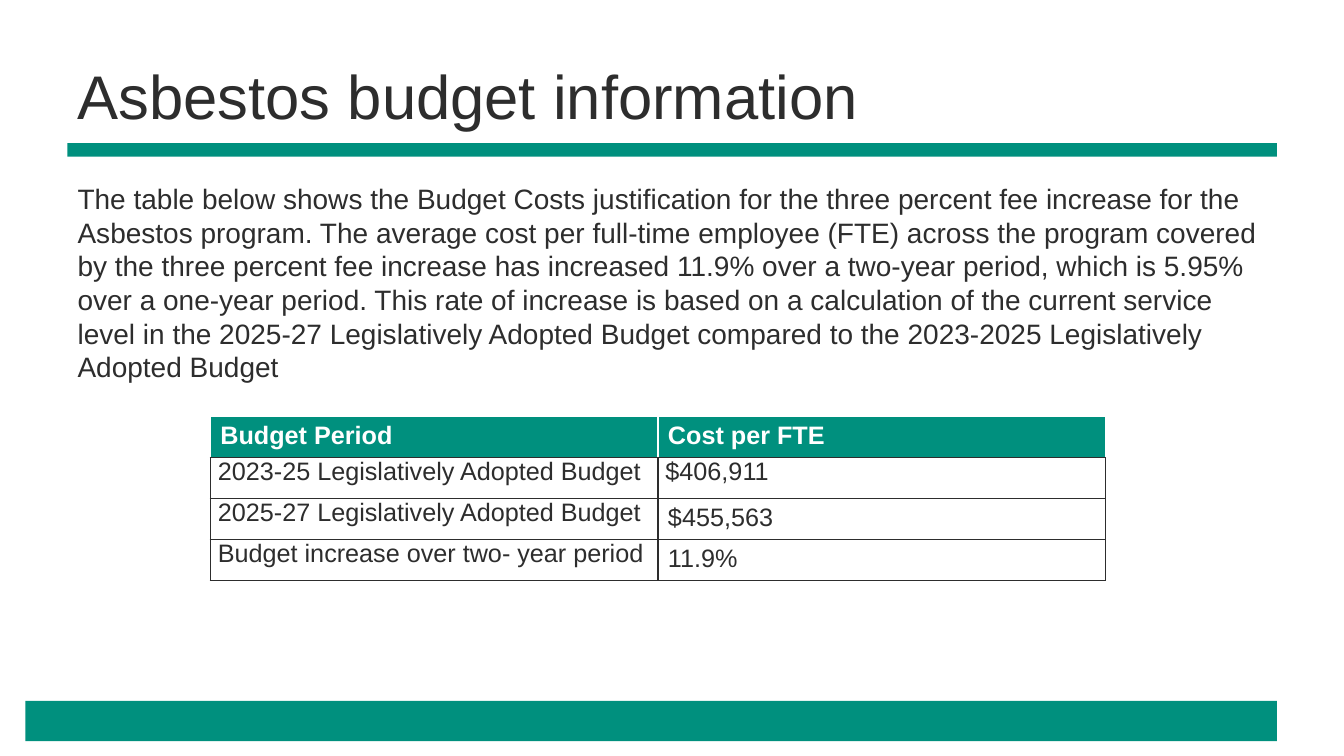
from lxml import etree
from pptx import Presentation
from pptx import util as u
from pptx.dml import color
from pptx.enum import shapes, text
from pptx.oxml import ns

GREEN, DARK, WHITE = "00907E", "2D2D2D", "FFFFFF"
FONT = "Arial"

TITLE = "Asbestos budget information"
SUMMARY = (
    "The table below shows the Budget Costs justification for the three percent fee "
    "increase for the Asbestos program. The average cost per full-time employee (FTE) "
    "across the program covered by the three percent fee increase has increased 11.9% "
    "over a two-year period, which is 5.95% over a one-year period. This rate of increase "
    "is based on a calculation of the current service level in the 2025-27 Legislatively "
    "Adopted Budget compared to the 2023-2025 Legislatively Adopted Budget"
)
BUDGET_ROWS = [
    ("Budget Period", "Cost per FTE"),
    ("2023-25 Legislatively Adopted Budget", "$406,911"),
    ("2025-27 Legislatively Adopted Budget", "$455,563"),
    ("Budget increase over two- year period", "11.9%"),
]


def rgb(value):
    return color.RGBColor.from_string(value)


def format_text(frame, size, colour, bold=False):
    for para in frame.paragraphs:
        for span in para.runs:
            span.font.name = FONT
            span.font.size = u.Pt(size)
            span.font.bold = bold
            span.font.color.rgb = rgb(colour)


def add_bar(page, left, top, width, height):
    bar = page.shapes.add_shape(
        shapes.MSO_SHAPE.RECTANGLE, u.Cm(left), u.Cm(top), u.Cm(width), u.Cm(height))
    bar.shadow.inherit = False
    bar.fill.solid()
    bar.fill.fore_color.rgb = rgb(GREEN)
    bar.line.fill.background()


def fill_placeholder(box, top, height, words, size):
    """Place a template placeholder across the text column and fill it."""
    box.left, box.top = u.Cm(1.7), u.Cm(top)
    box.width, box.height = u.Cm(30.48), u.Cm(height)
    frame = box.text_frame
    frame.text = words
    frame.word_wrap = True
    frame.auto_size = text.MSO_AUTO_SIZE.NONE
    para = frame.paragraphs[0]
    para.alignment = text.PP_ALIGN.LEFT
    para.space_before = u.Pt(0)
    format_text(frame, size, DARK)


def remove_bullet(para):
    properties = para._p.get_or_add_pPr()
    properties.set("marL", "0")
    properties.set("indent", "0")
    etree.SubElement(properties, ns.qn("a:buNone"))


def set_borders(cell, colours):
    """Draw 1 pt borders in the order left, right, top, bottom."""
    properties = cell._tc.get_or_add_tcPr()
    for side, colour in zip("LRTB", colours):
        line = etree.SubElement(properties, ns.qn(f"a:ln{side}"), w=str(u.Pt(1)))
        fill = etree.SubElement(line, ns.qn("a:solidFill"))
        etree.SubElement(fill, ns.qn("a:srgbClr"), val=colour)


def format_cell(cell, words, header, tight):
    cell.text = words
    set_borders(cell, [WHITE] * 3 + [DARK] if header else [DARK] * 4)
    cell.fill.solid()
    cell.fill.fore_color.rgb = rgb(GREEN if header else WHITE)
    if tight:
        cell.margin_left = cell.margin_right = u.Cm(0.19)
        cell.margin_top = cell.margin_bottom = u.Cm(0)
    format_text(cell.text_frame, 18, WHITE if header else DARK, header)


def add_budget_table(page):
    table = page.shapes.add_table(
        len(BUDGET_ROWS), 2, u.Cm(5.3), u.Cm(10.5), u.Cm(22.56), u.Cm(4.12)).table
    table.horz_banding = False
    for r, row in enumerate(BUDGET_ROWS):
        for c, words in enumerate(row):
            tight = r == 1 or (r > 1 and c == 0)
            format_cell(table.cell(r, c), words, r == 0, tight)


def main():
    deck = Presentation()
    deck.slide_width, deck.slide_height = u.Cm(33.87), u.Cm(19.05)
    page = deck.slides.add_slide(deck.slide_layouts[1])

    title, body = page.placeholders[0], page.placeholders[1]
    fill_placeholder(title, 0.85, 3.1, TITLE, 44)
    title.text_frame.vertical_anchor = text.MSO_ANCHOR.MIDDLE
    fill_placeholder(body, 4.45, 12.57, SUMMARY, 20)
    remove_bullet(body.text_frame.paragraphs[0])

    add_bar(page, 1.7, 3.61, 30.48, 0.34)
    add_bar(page, 0.64, 17.66, 31.54, 1.02)
    add_budget_table(page)
    deck.save("out.pptx")


if __name__ == "__main__":
    main()
